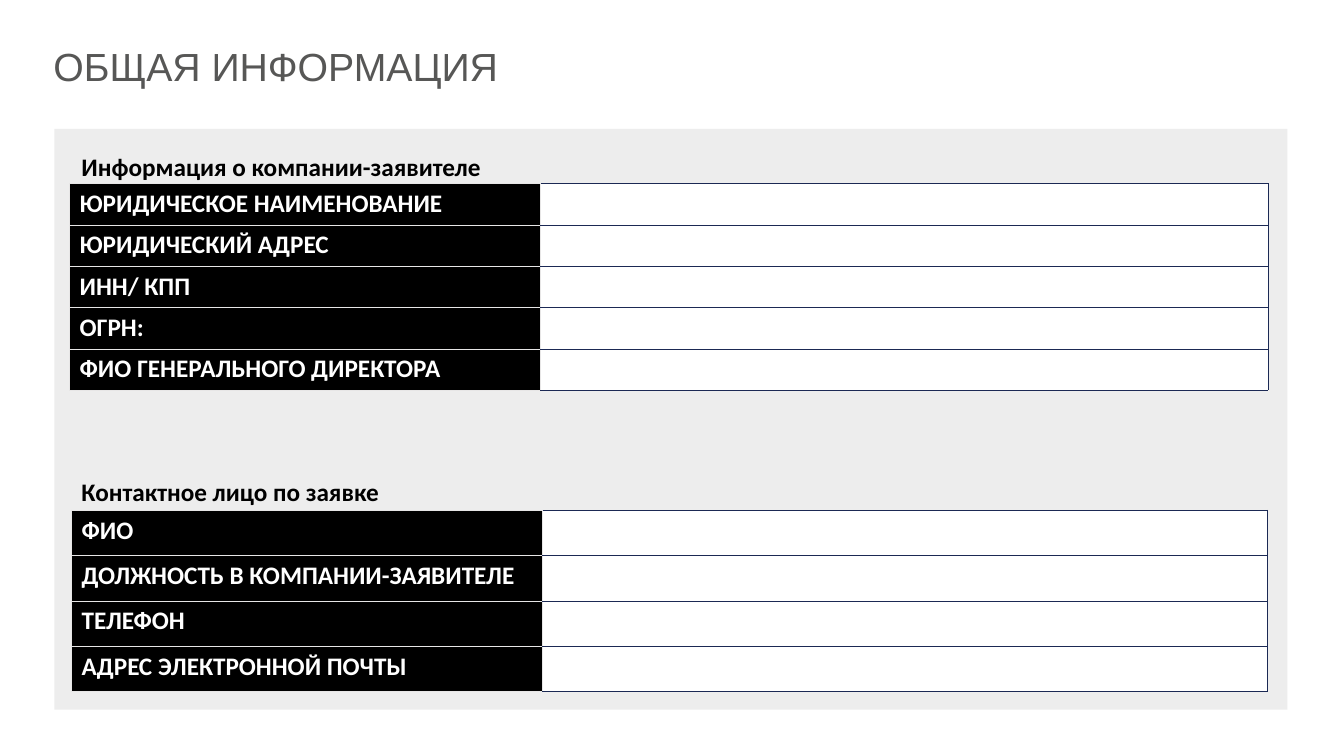
import pptx
import pptx.util
import pptx.dml.color
import pptx.enum.shapes
import pptx.enum.text
import pptx.oxml
import pptx.oxml.ns

Inches = pptx.util.Inches
Pt = pptx.util.Pt


def color(code):
    return pptx.dml.color.RGBColor.from_string(code)


class Page:
    GRAY, PANEL, BLACK, WHITE = "575756", "EDEDED", "000000", "FFFFFF"
    PALE, NAVY = "E7E6E6", "1B2954"

    def __init__(self, deck):
        self.slide = deck.slides.add_slide(deck.slide_layouts[5])
        self.shapes = self.slide.shapes

    def style(self, frame, font, size, tint, bold=False):
        for run in frame.paragraphs[0].runs:
            run.font.name = font
            run.font.size = Pt(size)
            run.font.bold = bold
            run.font.color.rgb = color(tint)

    def title(self, text, left, top, width, height):
        box = self.shapes.title
        box.left, box.top = Inches(left), Inches(top)
        box.width, box.height = Inches(width), Inches(height)
        frame = box.text_frame
        frame.text = text
        frame.auto_size = pptx.enum.text.MSO_AUTO_SIZE.NONE
        frame.vertical_anchor = pptx.enum.text.MSO_ANCHOR.TOP
        frame.paragraphs[0].alignment = pptx.enum.text.PP_ALIGN.LEFT
        frame.paragraphs[0].line_spacing = 0.9
        self.style(frame, "Arial", 28, self.GRAY)

    def panel(self, left, top, width, height):
        box = self.shapes.add_shape(
            pptx.enum.shapes.MSO_SHAPE.RECTANGLE,
            Inches(left), Inches(top), Inches(width), Inches(height))
        box.shadow.inherit = False
        box.fill.solid()
        box.fill.fore_color.rgb = color(self.PANEL)
        box.line.fill.background()

    def label(self, text, left, top, width, height=0.4):
        box = self.shapes.add_textbox(
            Inches(left), Inches(top), Inches(width), Inches(height))
        frame = box.text_frame
        frame.text = text
        frame.word_wrap = False
        self.style(frame, "Calibri", 18, self.BLACK, True)

    def edges(self, cell, tints):
        """Draw thin borders; tints follow the order left, right, top, bottom."""
        props = cell._tc.get_or_add_tcPr()
        for spot, (side, tint) in enumerate(zip("LRTB", tints)):
            props.insert(spot, pptx.oxml.parse_xml(
                f'<a:ln{side} {pptx.oxml.ns.nsdecls("a")} w="{Pt(0.25)}">'
                f'<a:solidFill><a:srgbClr val="{tint}"/></a:solidFill>'
                f'</a:ln{side}>'))

    def form(self, names, left, top, widths, step):
        """Add a table of field names with an empty cell beside each."""
        table = self.shapes.add_table(
            len(names), 2, Inches(left), Inches(top),
            Inches(sum(widths)), Inches(step * len(names))).table
        table.first_row = table.horz_banding = False
        for col, width in zip(table.columns, widths):
            col.width = Inches(width)
        for row, name in zip(table.rows, names):
            row.height = Inches(step)
            key, value = row.cells
            key.text_frame.text = name
            self.style(key.text_frame, "Calibri", 18, self.WHITE, True)
            for cell, fill, tint in ((key, self.BLACK, self.PALE),
                                     (value, self.WHITE, self.NAVY)):
                cell.fill.solid()
                cell.fill.fore_color.rgb = color(fill)
                self.edges(cell, [self.PALE] + [tint] * 3)


def main():
    deck = pptx.Presentation()
    deck.slide_width, deck.slide_height = Inches(13.33), Inches(7.5)
    page = Page(deck)
    page.panel(0.54, 1.28, 12.23, 5.76)
    page.title("ОБЩАЯ ИНФОРМАЦИЯ", 0.43, 0.42, 5.03, 0.42)
    page.form(["ЮРИДИЧЕСКОЕ НАИМЕНОВАНИЕ", "ЮРИДИЧЕСКИЙ АДРЕС", "ИНН/ КПП",
               "ОГРН:", "ФИО ГЕНЕРАЛЬНОГО ДИРЕКТОРА"],
              0.69, 1.82, (4.67, 7.22), 0.41)
    page.label("Информация о компании-заявителе", 0.71, 1.45, 4.27)
    page.form(["ФИО", "ДОЛЖНОСТЬ В КОМПАНИИ-ЗАЯВИТЕЛЕ", "ТЕЛЕФОН",
               "АДРЕС ЭЛЕКТРОННОЙ ПОЧТЫ"],
              0.71, 5.06, (4.67, 7.19), 0.45)
    page.label("Контактное лицо по заявке", 0.71, 4.68, 3.19)
    deck.save("out.pptx")


if __name__ == "__main__":
    main()
